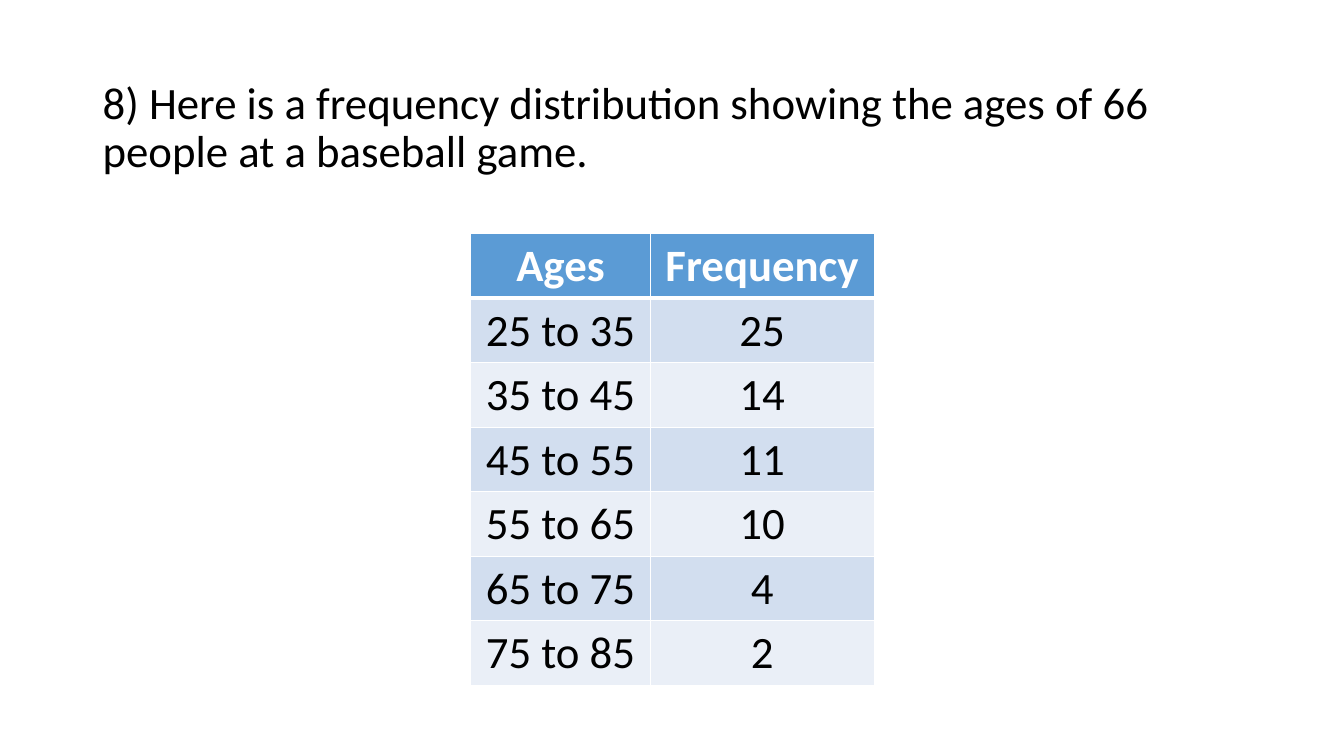
import pptx
import pptx.dml.color
import pptx.enum.text
import pptx.oxml
import pptx.oxml.ns
import pptx.util

Inches = pptx.util.Inches
Pt = pptx.util.Pt

QUESTION = ("8) Here is a frequency distribution showing the ages of 66 "
            "people at a baseball game.")
HEADINGS = ("Ages", "Frequency")
FREQUENCIES = (25, 14, 11, 10, 4, 2)
FIRST_AGE, AGE_STEP = 25, 10
COLUMN_WIDTHS = (1.78, 2.22)
ROW_HEIGHT = 0.64
HEADER_FILL = "5B9BD5"
BAND_FILLS = ("D2DEEF", "EAEFF7")


def color(value):
    return pptx.dml.color.RGBColor.from_string(value)


def add_span(para, text, ink, bold=False):
    span = para.add_run()
    span.text = text
    span.font.name = "Calibri"
    span.font.size = Pt(32)
    span.font.bold = bold
    span.font.color.rgb = color(ink)


def set_borders(cell, top, bottom):
    """Draw white borders; top and bottom widths are in points."""
    widths = {"lnL": 1, "lnR": 1, "lnT": top, "lnB": bottom}
    properties = cell._tc.get_or_add_tcPr()
    for position, (side, width) in enumerate(widths.items()):
        border = pptx.oxml.parse_xml(
            f'<a:{side} {pptx.oxml.ns.nsdecls("a")} w="{Pt(width)}">'
            '<a:solidFill><a:srgbClr val="FFFFFF"/></a:solidFill>'
            f'</a:{side}>')
        properties.insert(position, border)


def add_question(page, left, top, width, height):
    box = page.shapes.add_textbox(
        Inches(left), Inches(top), Inches(width), Inches(height))
    box.text_frame.word_wrap = True
    para = box.text_frame.paragraphs[0]
    para.line_spacing = 0.9
    add_span(para, QUESTION, "000000")


def add_frequency_table(page, left, top):
    # One row per age class, below the headings
    rows = [HEADINGS]
    for index, frequency in enumerate(FREQUENCIES):
        age = FIRST_AGE + index * AGE_STEP
        rows.append((f"{age} to {age + AGE_STEP}", str(frequency)))

    table = page.shapes.add_table(
        len(rows), len(HEADINGS), Inches(left), Inches(top),
        Inches(sum(COLUMN_WIDTHS)), Inches(ROW_HEIGHT * len(rows))).table
    for column, width in zip(table.columns, COLUMN_WIDTHS):
        column.width = Inches(width)

    # Header and alternating bands
    for r, row in enumerate(rows):
        header = r == 0
        fill = HEADER_FILL if header else BAND_FILLS[(r - 1) % 2]
        for c, text in enumerate(row):
            cell = table.cell(r, c)
            cell.fill.solid()
            cell.fill.fore_color.rgb = color(fill)
            set_borders(cell, top=3 if r == 1 else 1, bottom=3 if header else 1)
            para = cell.text_frame.paragraphs[0]
            para.alignment = pptx.enum.text.PP_ALIGN.CENTER
            add_span(para, text, "FFFFFF" if header else "000000", header)


def main():
    deck = pptx.Presentation()
    deck.slide_width = Inches(13.33)
    deck.slide_height = Inches(7.5)
    page = deck.slides.add_slide(deck.slide_layouts[6])
    add_question(page, 0.92, 0.75, 11.5, 1.2)
    add_frequency_table(page, 4.67, 2.32)
    deck.save("out.pptx")


if __name__ == "__main__":
    main()
